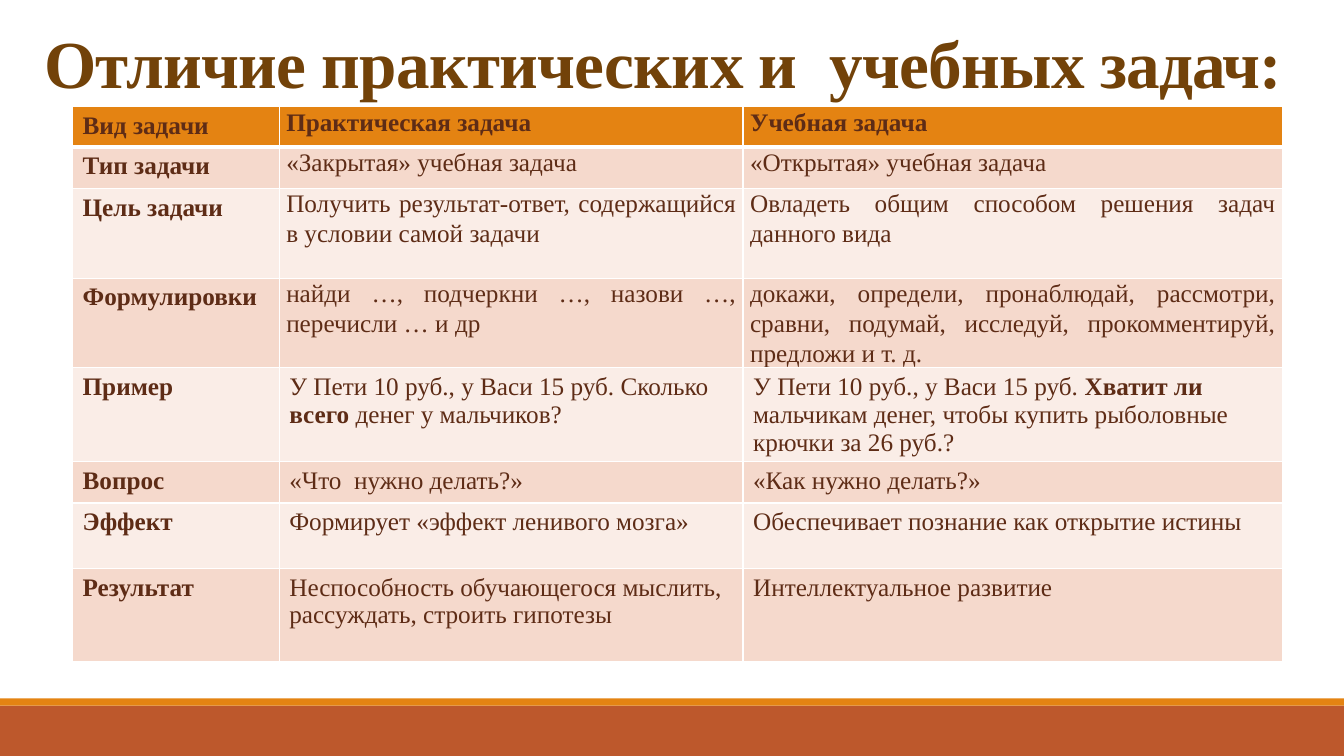
from pptx import Presentation
from pptx.dml.color import RGBColor
from pptx.enum import shapes, text
from pptx.oxml import parse_xml
from pptx.oxml import ns
from pptx.util import Inches, Pt

COLORS = {
    "title": "724209", "text": "5E2C16", "header": "E48312", "footer": "BD582C",
    "odd": "F5D9CC", "even": "FAEDE7", "border": "FFFFFF",
}
FONT = "Times New Roman"
ROWS = [
    (0.4, "Вид задачи", "Практическая задача", "Учебная задача"),
    (0.41, "Тип задачи", "«Закрытая» учебная задача", "«Открытая» учебная задача"),
    (0.89, "Цель задачи", "Получить результат-ответ, содержащийся в условии самой задачи",
     "Овладеть общим способом решения задач данного вида"),
    (0.89, "Формулировки", "найди …, подчеркни …, назови …, перечисли … и др",
     "докажи, определи, пронаблюдай, рассмотри, сравни, подумай, исследуй, "
     "прокомментируй, предложи и т. д."),
    (0.93, "Пример", "У Пети 10 руб., у Васи 15 руб. Сколько *всего* денег у мальчиков?",
     "У Пети 10 руб., у Васи 15 руб. *Хватит ли *мальчикам денег, "
     "чтобы купить рыболовные крючки за 26 руб.?"),
    (0.41, "Вопрос", "«Что  нужно делать?»", "«Как нужно делать?»"),
    (0.65, "Эффект", "Формирует «эффект ленивого мозга»",
     "Обеспечивает познание как открытие истины"),
    (0.92, "Результат", "Неспособность обучающегося мыслить, рассуждать, строить гипотезы",
     "Интеллектуальное развитие"),
]
JUSTIFIED_ROWS = 4


def add_span(para, words, size, color, bold):
    span = para.add_run()
    span.text = words
    for name, value in {"name": FONT, "size": Pt(size), "bold": bold}.items():
        setattr(span.font, name, value)
    span.font.color.rgb = RGBColor.from_string(COLORS[color])
    return span


def add_border(cell, position, side, width):
    cell._tc.get_or_add_tcPr().insert(position, parse_xml(
        f'<a:{side} {ns.nsdecls("a")} w="{Pt(width)}"><a:solidFill>'
        f'<a:srgbClr val="{COLORS["border"]}"/></a:solidFill></a:{side}>'))


deck = Presentation()
deck.slide_width, deck.slide_height = Inches(13.33), Inches(7.5)
page = deck.slides.add_slide(deck.slide_layouts[5])

for top, height, color in [(7, 0.5, "footer"), (6.93, 0.07, "header")]:
    band = page.shapes.add_shape(
        shapes.MSO_SHAPE.RECTANGLE, 0, Inches(top), deck.slide_width, Inches(height))
    band.shadow.inherit = False
    band.fill.solid()
    band.fill.fore_color.rgb = RGBColor.from_string(COLORS[color])
    band.line.fill.background()

title = page.shapes.title
for name, value in {"left": 0.13, "top": -0.53, "width": 12.9, "height": 1.59}.items():
    setattr(title, name, Inches(value))
title_format = {
    "auto_size": text.MSO_AUTO_SIZE.NONE, "word_wrap": True,
    "vertical_anchor": text.MSO_ANCHOR.BOTTOM,
}
for name, value in title_format.items():
    setattr(title.text_frame, name, value)
para = title.text_frame.paragraphs[0]
para.alignment = text.PP_ALIGN.CENTER
para.line_spacing = 0.85
heading = add_span(para, "Отличие практических и  учебных задач:", 48, "title", True)
heading.font._element.set("spc", "-50")

table = page.shapes.add_table(
    len(ROWS), 3, Inches(0.72), Inches(1.06), Inches(12),
    Inches(sum(row[0] for row in ROWS))).table
for column, width in zip(table.columns, [2.05, 4.6, 5.35]):
    column.width = Inches(width)

tight_format = {
    "margin_left": Inches(0.07), "margin_right": Inches(0.07),
    "margin_top": 0, "margin_bottom": 0,
}
for row_index, (height, *entries) in enumerate(ROWS):
    table.rows[row_index].height = Inches(height)
    fill = "header" if row_index == 0 else "odd" if row_index % 2 else "even"
    for column_index, entry in enumerate(entries):
        cell = table.cell(row_index, column_index)
        cell.fill.solid()
        cell.fill.fore_color.rgb = RGBColor.from_string(COLORS[fill])
        widths = {"lnL": 1, "lnR": 1, "lnT": 3 if row_index == 1 else 1,
                  "lnB": 3 if row_index == 0 else 1}
        for position, (side, width) in enumerate(widths.items()):
            add_border(cell, position, side, width)
        para = cell.text_frame.paragraphs[0]
        if column_index > 0 and row_index < JUSTIFIED_ROWS:
            for name, value in tight_format.items():
                setattr(cell, name, value)
            para.alignment = text.PP_ALIGN.JUSTIFY
            para.line_spacing = 1.07
        label = row_index == 0 or column_index == 0
        for part_index, part in enumerate(entry.split("*")):
            add_span(para, part, 18, "text", label or part_index % 2 == 1)

deck.save("out.pptx")
